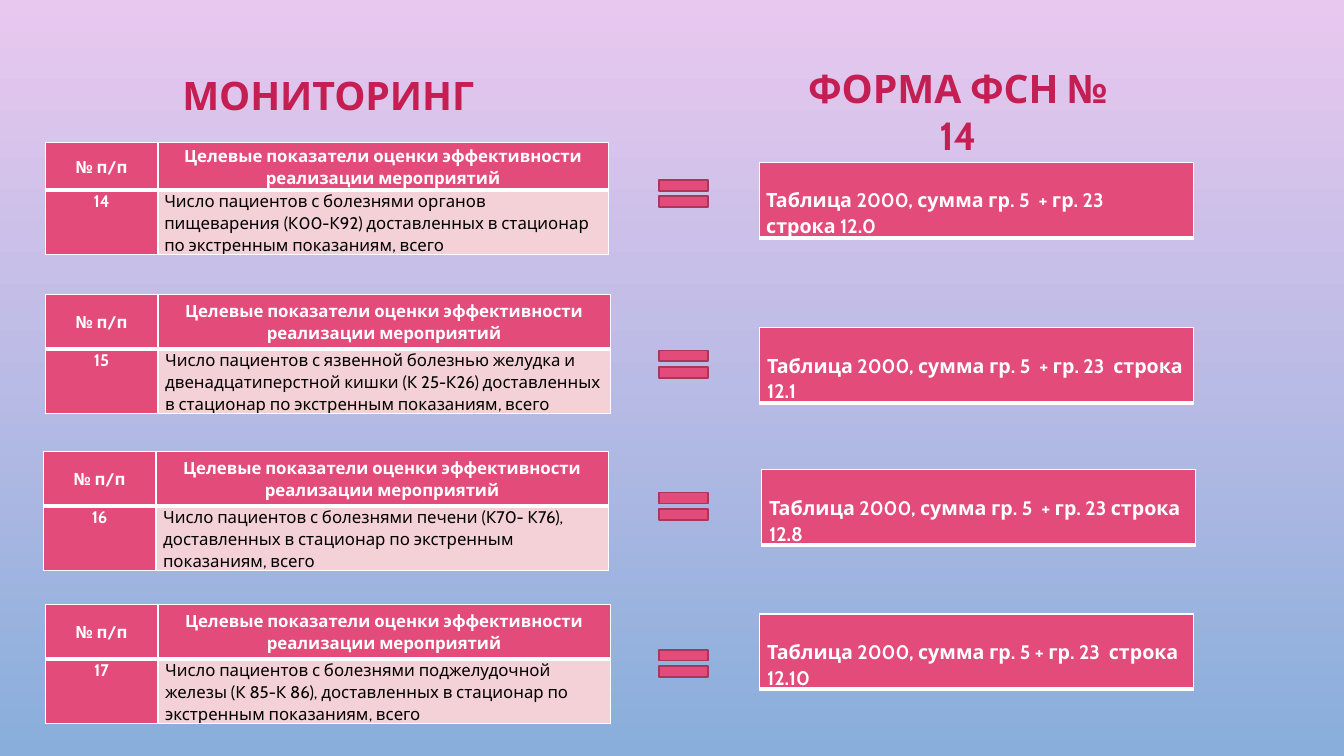
from pptx import Presentation
from pptx.dml.color import RGBColor
from pptx.enum.shapes import MSO_SHAPE
from pptx.enum.text import MSO_ANCHOR, MSO_AUTO_SIZE, PP_ALIGN
from pptx.oxml import parse_xml
from pptx.oxml.ns import nsdecls
from pptx.util import Cm, Pt

COLORS = {
    "sky_top": "E9C8EF",
    "sky_bottom": "89AEDB",
    "heading": "C41E52",
    "accent": "E34B7A",
    "accent_line": "A8375A",
    "pale": "F4D0D7",
    "white": "FFFFFF",
    "black": "000000",
}
FONT = "Cabin"
COLUMN_HEADS = ("№ п/п", "Целевые показатели оценки эффективности реализации мероприятий")
NUMBER_WIDTH = 2.84
INDICATOR_HEIGHT = 1.62
EQUAL_LEFT, EQUAL_WIDTH, EQUAL_HEIGHT = 16.38, 1.68, 1.17
FORM_WIDTH, FORM_HEIGHT = 10.92, 1.83
FORM_TOP_MARGIN = 0.63

# Monitoring box (left, top, width), header height, equals top, form left and top,
# side margin, number, indicator, form reference
ROWS = [
    ((1.14, 3.6, 14.19), 1.19, 4.29, (19.15, 4.09), 0.16, "14",
     "Число пациентов с болезнями органов пищеварения (К00-К92) "
     "доставленных в стационар по экстренным показаниям, всего",
     "Таблица 2000, сумма гр. 5  + гр. 23\vстрока 12.0"),
    ((1.14, 7.42, 14.24), 1.37, 8.59, (19.15, 8.26), 0.18, "15",
     "Число пациентов с язвенной болезнью желудка и двенадцатиперстной кишки "
     "(К 25-К26) доставленных в стационар по экстренным показаниям, всего",
     "Таблица 2000, сумма гр. 5  + гр. 23  строка 12.1"),
    ((1.09, 11.38, 14.24), 1.37, 12.17, (19.2, 11.84), 0.18, "16",
     "Число пациентов с болезнями печени (К70- К76), "
     "доставленных в стационар по экстренным показаниям, всего",
     "Таблица 2000, сумма гр. 5  + гр. 23 строка 12.8"),
    ((1.14, 15.24, 14.24), 1.37, 16.13, (19.15, 15.47), 0.18, "17",
     "Число пациентов с болезнями поджелудочной железы (К 85-К 86), "
     "доставленных в стационар по экстренным показаниям, всего",
     "Таблица 2000, сумма гр. 5 + гр. 23  строка 12.10"),
]


def rgb(name):
    return RGBColor.from_string(COLORS[name])


def format_paragraph(paragraph, size, color, bold=True, align=PP_ALIGN.LEFT, spacing=1.0):
    paragraph.alignment = align
    paragraph.line_spacing = spacing
    paragraph.space_before = Pt(0)
    for run in paragraph.runs:
        run.font.name = FONT
        run.font.size = Pt(size)
        run.font.bold = bold
        run.font.color.rgb = rgb(color)


def paint_background(slide):
    fill = slide.background.fill
    fill.gradient()
    fill.gradient_angle = 270
    for stop, position, name in zip(fill.gradient_stops, (0, 1), ("sky_top", "sky_bottom")):
        stop.position = position
        stop.color.rgb = rgb(name)


def place_heading(shape, box, text, anchor, spacing, bottom_margin, auto_size):
    shape.left, shape.top, shape.width, shape.height = map(Cm, box)
    frame = shape.text_frame
    frame.text = text
    frame.word_wrap = True
    frame.auto_size = auto_size
    frame.vertical_anchor = anchor
    frame.margin_bottom = Cm(bottom_margin)
    format_paragraph(frame.paragraphs[0], 28, "heading", align=PP_ALIGN.CENTER, spacing=spacing)


def add_borders(cell, top, bottom):
    properties = cell._tc.get_or_add_tcPr()
    for side, points in (("L", 1), ("R", 1), ("T", top), ("B", bottom)):
        properties.append(parse_xml(
            f'<a:ln{side} {nsdecls("a")} w="{Pt(points)}"><a:solidFill>'
            f'<a:srgbClr val="{COLORS["white"]}"/></a:solidFill></a:ln{side}>'))


def add_plain_table(slide, box, column_widths, row_heights):
    table = slide.shapes.add_table(
        len(row_heights), len(column_widths), *map(Cm, box)).table
    table.first_row = table.horz_banding = False
    for column, width in zip(table.columns, column_widths):
        column.width = Cm(width)
    for row, height in zip(table.rows, row_heights):
        row.height = Cm(height)
    return table


def fill_cell(cell, text, margin, fill="accent", size=12, color="white", bold=True,
              align=PP_ALIGN.CENTER, anchor=MSO_ANCHOR.TOP, top_margin=0, borders=(1, 3)):
    cell.text = text
    cell.margin_left = cell.margin_right = Cm(margin)
    cell.margin_top, cell.margin_bottom = Cm(top_margin), 0
    cell.vertical_anchor = anchor
    add_borders(cell, *borders)
    cell.fill.solid()
    cell.fill.fore_color.rgb = rgb(fill)
    format_paragraph(cell.text_frame.paragraphs[0], size, color, bold, align, 1.07)


def add_monitoring_table(slide, box, header_height, margin, number, indicator):
    left, top, width = box
    heights = (header_height, INDICATOR_HEIGHT)
    table = add_plain_table(slide, (left, top, width, sum(heights)),
                            (NUMBER_WIDTH, width - NUMBER_WIDTH), heights)
    for index, head in enumerate(COLUMN_HEADS):
        fill_cell(table.cell(0, index), head, margin, anchor=MSO_ANCHOR.MIDDLE)
    fill_cell(table.cell(1, 0), number, margin, borders=(3, 1))
    fill_cell(table.cell(1, 1), indicator, margin, fill="pale", color="black",
              bold=False, align=PP_ALIGN.LEFT, borders=(3, 1))


def add_equals_sign(slide, box):
    shape = slide.shapes.add_shape(MSO_SHAPE.MATH_EQUAL, *map(Cm, box))
    shape.shadow.inherit = False
    shape.fill.solid()
    shape.fill.fore_color.rgb = rgb("accent")
    shape.line.color.rgb = rgb("accent_line")
    shape.line.width = Pt(1.25)


def add_form_reference(slide, position, margin, text):
    table = add_plain_table(slide, (*position, FORM_WIDTH, FORM_HEIGHT),
                            (FORM_WIDTH,), (FORM_HEIGHT,))
    fill_cell(table.cell(0, 0), text, margin, size=14, align=PP_ALIGN.LEFT,
              top_margin=FORM_TOP_MARGIN)


def build_comparison_slide(presentation):
    slide = presentation.slides.add_slide(presentation.slide_layouts[4])
    paint_background(slide)
    holders = {holder.placeholder_format.idx: holder for holder in slide.placeholders}
    place_heading(holders.pop(1), (1.5, 1.19, 13.54, 2.79), "МОНИТОРИНГ",
                  MSO_ANCHOR.BOTTOM, 0.85, 1, MSO_AUTO_SIZE.NONE)
    place_heading(holders.pop(3), (19.76, 1.5, 8.76, 1.45), "ФОРМА ФСН № 14",
                  MSO_ANCHOR.TOP, 1.0, 0.13, MSO_AUTO_SIZE.SHAPE_TO_FIT_TEXT)
    for unused in holders.values():
        unused.element.getparent().remove(unused.element)

    for box, header_height, equals_top, form_position, margin, number, indicator, form in ROWS:
        add_monitoring_table(slide, box, header_height, margin, number, indicator)
        add_equals_sign(slide, (EQUAL_LEFT, equals_top, EQUAL_WIDTH, EQUAL_HEIGHT))
        add_form_reference(slide, form_position, margin, form)


def main():
    presentation = Presentation()
    presentation.slide_width, presentation.slide_height = Cm(33.87), Cm(19.05)
    build_comparison_slide(presentation)
    presentation.save("out.pptx")


if __name__ == "__main__":
    main()
